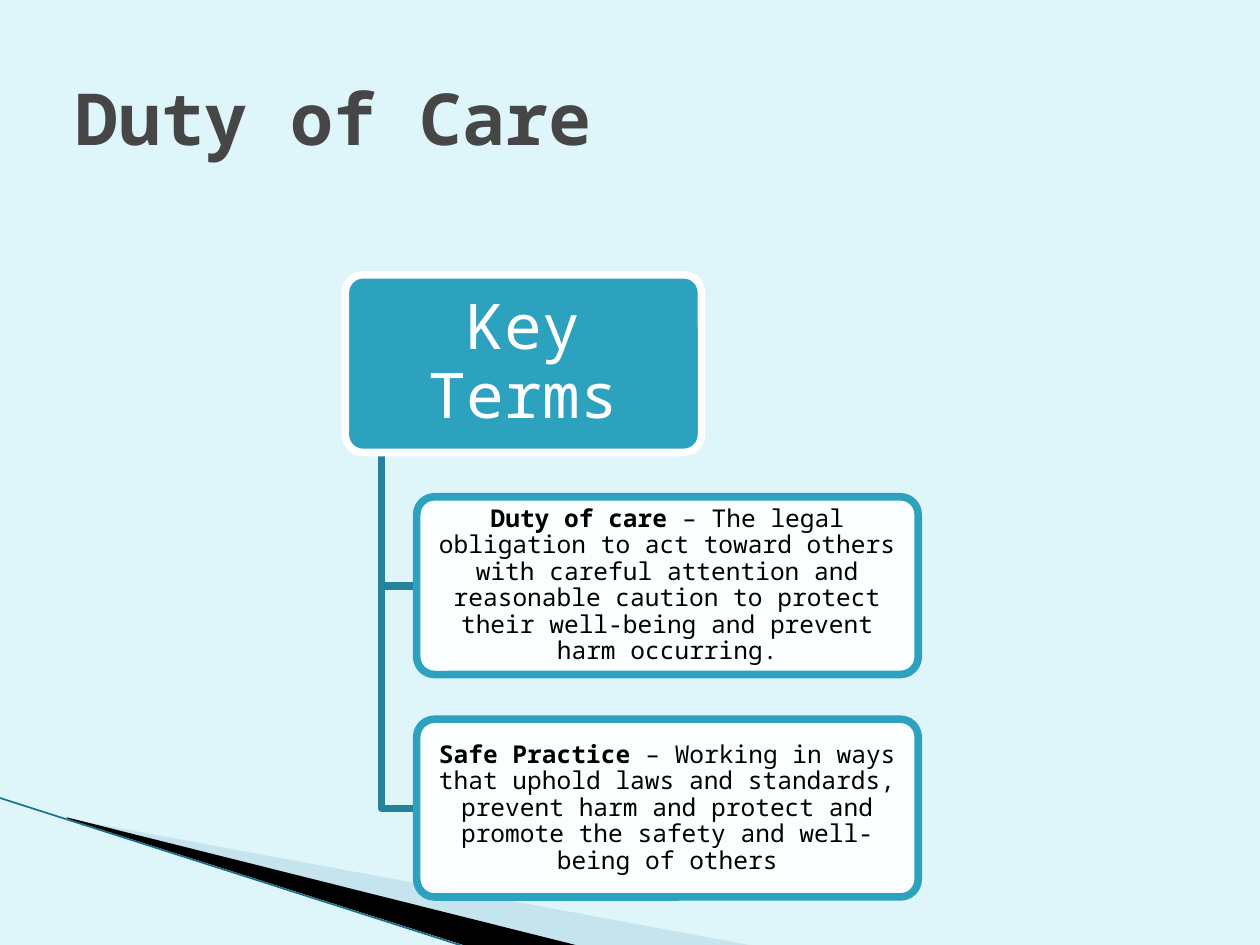
"""Build the Duty of Care slide with its key terms hierarchy."""
import pptx
import pptx.dml.color
import pptx.enum.shapes
import pptx.enum.text
import pptx.oxml
import pptx.oxml.ns
import pptx.util

Pt = pptx.util.Pt
FONT = "Noto Sans Mono"
ACCENT = "2DA2BF"


def paint(color_format, hex_color, alpha=None):
    color_format.rgb = pptx.dml.color.RGBColor.from_string(hex_color)
    if alpha is not None:
        choice = color_format._xFill.find(pptx.oxml.ns.qn("a:srgbClr"))
        opacity = pptx.oxml.parse_xml(
            f'<a:alpha {pptx.oxml.ns.nsdecls("a")} val="{alpha * 1000}"/>')
        choice.append(opacity)


def write(frame, parts, size, color, margins, align):
    frame.word_wrap = True
    frame.vertical_anchor = pptx.enum.text.MSO_ANCHOR.MIDDLE
    frame.margin_left = frame.margin_right = Pt(margins[0])
    frame.margin_top = frame.margin_bottom = Pt(margins[1])
    paragraph = frame.paragraphs[0]
    paragraph.alignment = align
    for words, bold in parts:
        run = paragraph.add_run()
        run.text = words
        run.font.name = FONT
        run.font.size = Pt(size)
        run.font.bold = bold
        paint(run.font.color, color)
    return paragraph


deck = pptx.Presentation()
deck.slide_width, deck.slide_height = Pt(720), Pt(540)
slide = deck.slides.add_slide(deck.slide_layouts[6])
shapes = slide.shapes
slide.background.fill.solid()
paint(slide.background.fill.fore_color, "DEF5FA")

wedges = [
    ([(39.6, 468.5), (428.4, 540.5), (328.5, 540.5), (39.6, 468)], "A0CBDC", 40),
    ([(38.2, 467.3), (329, 540.5), (268, 541.2), (38.9, 468)], "000000", None),
]
for points, color, alpha in wedges:
    builder = shapes.build_freeform(*points[0], scale=Pt(1))
    builder.add_line_segments(points[1:])
    wedge = builder.convert_to_shape()
    wedge.shadow.inherit = False
    wedge.fill.solid()
    paint(wedge.fill.fore_color, color, alpha)
    wedge.line.fill.background()

edge = shapes.add_connector(pptx.enum.shapes.MSO_CONNECTOR.STRAIGHT,
                            Pt(-0.7), Pt(455.8), Pt(267.1), Pt(541.4))
edge.line.width = Pt(0.95)
edge.line.fill.solid()
paint(edge.line.fill.fore_color, "1C7189")
edge._element.spPr.append(pptx.oxml.parse_xml(
    f'<a:effectLst {pptx.oxml.ns.nsdecls("a")}/>'))

title = shapes.add_textbox(Pt(36), Pt(21.6), Pt(648), Pt(90))
write(title.text_frame, [("Duty of Care", True)], 41, "464646", (7.2, 3.6),
      pptx.enum.text.PP_ALIGN.LEFT)

card_height, card_left, first_top, pitch = 101.6, 238.1, 283.9, 127.1
trunk_x, trunk_top = 217.7, 258.6
definitions = [
    ("Duty of care ", "– The legal obligation to act toward others with careful "
     "attention and reasonable caution to protect their well-being and prevent "
     "harm occurring."),
    ("Safe Practice ", "– Working in ways that uphold laws and standards, prevent "
     "harm and protect and promote the safety and well-being of others"),
]
cards = [(197.3, 157, 203.6, [("Key Terms", False)], 36, "FFFFFF", (5, 3.6),
          ACCENT, None, "FFFFFF")]
for index, (term, meaning) in enumerate(definitions):
    top = first_top + index * pitch
    cards.append((card_left, top, 286.6, [(term, True), (meaning, False)], 14,
                  "000000", (2.2, 1.4), "FFFFFF", 90, ACCENT))
    middle = top + card_height / 2
    builder = shapes.build_freeform(trunk_x, trunk_top, scale=Pt(1))
    builder.add_line_segments([(trunk_x, middle), (card_left, middle)], close=False)
    branch = builder.convert_to_shape()
    branch.shadow.inherit = False
    branch.fill.background()
    branch.line.width = Pt(4.33)
    paint(branch.line.color, "248299")

for left, top, width, parts, size, ink, margins, fill, alpha, border in cards:
    card = shapes.add_shape(pptx.enum.shapes.MSO_SHAPE.ROUNDED_RECTANGLE,
                            Pt(left), Pt(top), Pt(width), Pt(card_height))
    card.adjustments[0] = 0.1
    card.shadow.inherit = False
    card.fill.solid()
    paint(card.fill.fore_color, fill, alpha)
    card.line.width = Pt(4.33)
    paint(card.line.color, border)
    paragraph = write(card.text_frame, parts, size, ink, margins,
                      pptx.enum.text.PP_ALIGN.CENTER)
    paragraph.line_spacing = 0.9

deck.save("out.pptx")
